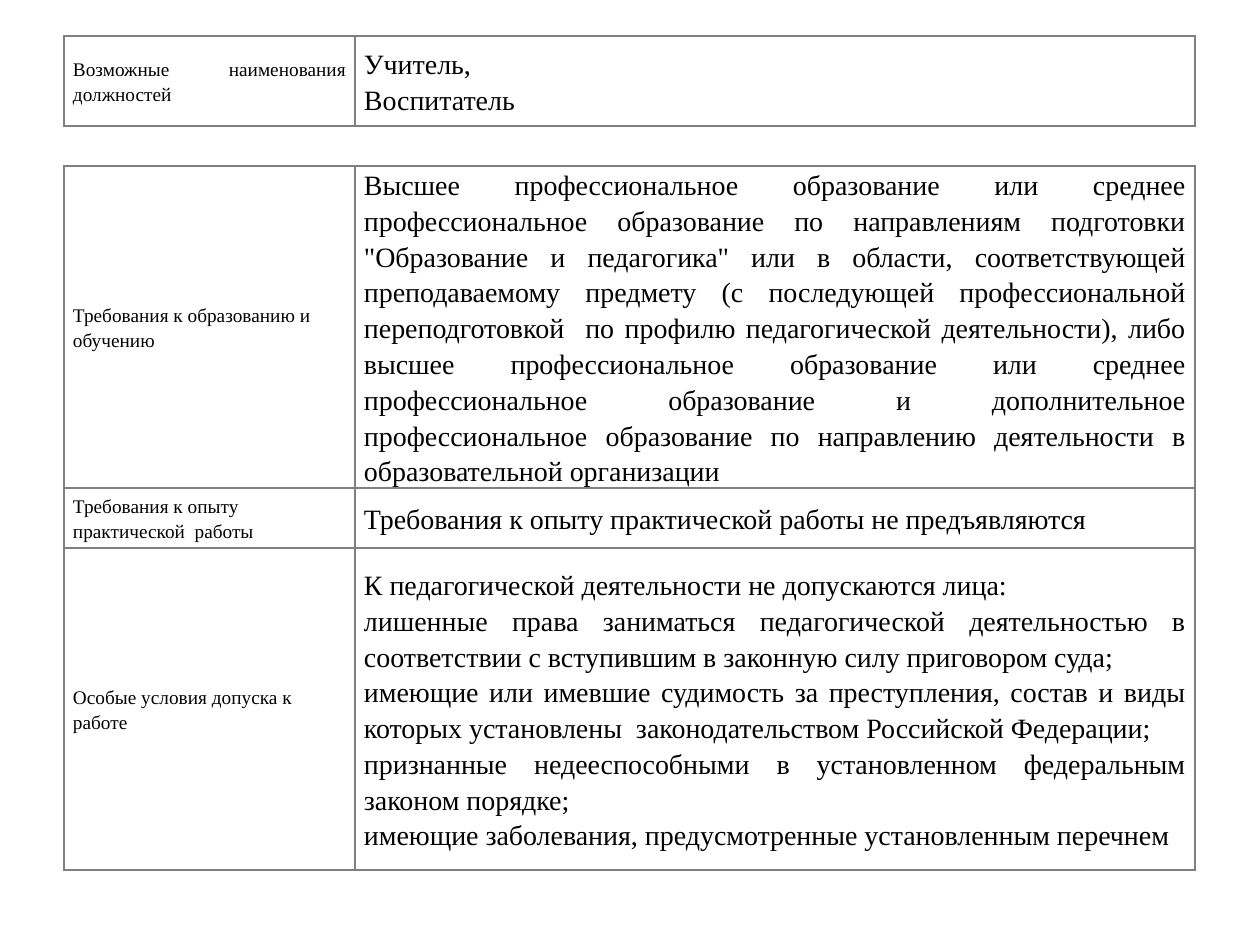
import pptx
import pptx.util
import pptx.dml.color
import pptx.enum.text
import pptx.oxml
import pptx.oxml.ns

PX = 914400 // 126
COLORS = {"text": "000000", "border": "808080"}
FONT = "Times New Roman"
LEFT, TOP = 64, 36
COLUMN_WIDTHS = [291, 840]
ROW_HEIGHTS = [90, 40, 322, 60, 322]
GAP_ROW = 1
ALIGN = pptx.enum.text.PP_ALIGN

ROWS = [
    ("Возможные наименования должностей", ["Учитель,", "Воспитатель"]),
    ("", []),
    ("Требования к образованию и обучению", [
        "Высшее профессиональное образование или среднее профессиональное "
        "образование по направлениям подготовки \"Образование и педагогика\" "
        "или в области, соответствующей преподаваемому предмету "
        "(с последующей профессиональной переподготовкой  по профилю "
        "педагогической деятельности), либо высшее профессиональное "
        "образование или среднее профессиональное образование и "
        "дополнительное профессиональное образование по направлению "
        "деятельности в образовательной организации"]),
    ("Требования к опыту практической  работы", [
        "Требования к опыту практической работы не предъявляются"]),
    ("Особые условия допуска к работе", [
        "К педагогической деятельности не допускаются лица:",
        "лишенные права заниматься педагогической деятельностью в "
        "соответствии с вступившим в законную силу приговором суда;",
        "имеющие или имевшие судимость за преступления, состав и виды "
        "которых установлены  законодательством Российской Федерации;",
        "признанные недееспособными в установленном федеральным законом "
        "порядке;",
        "имеющие заболевания, предусмотренные установленным перечнем"]),
]


def set_borders(cell, visible_sides):
    properties = cell._tc.get_or_add_tcPr()
    namespace = pptx.oxml.ns.nsdecls("a")
    for index, side in enumerate("LRTB"):
        paint = "<a:noFill/>"
        if side in visible_sides:
            paint = f'<a:solidFill><a:srgbClr val="{COLORS["border"]}"/></a:solidFill>'
        line = f'<a:ln{side} {namespace} w="12700">{paint}</a:ln{side}>'
        properties.insert(index, pptx.oxml.parse_xml(line))


def fill_cell(cell, texts, size, alignment):
    cell.text = "\n".join(texts)
    for para in cell.text_frame.paragraphs:
        para.alignment = alignment
        para.line_spacing = 1.15
        para.font.name = FONT
        para.font.size = pptx.util.Pt(size)
        para.font.color.rgb = pptx.dml.color.RGBColor.from_string(COLORS["text"])


deck = pptx.Presentation()
deck.slide_width = pptx.util.Inches(10)
deck.slide_height = pptx.util.Inches(7.5)
page = deck.slides.add_slide(deck.slide_layouts[6])

frame = page.shapes.add_table(
    len(ROW_HEIGHTS), len(COLUMN_WIDTHS), LEFT * PX, TOP * PX,
    sum(COLUMN_WIDTHS) * PX, sum(ROW_HEIGHTS) * PX)
table = frame.table
table.first_row = False
table.horz_banding = False
for column, width in zip(table.columns, COLUMN_WIDTHS):
    column.width = width * PX
for row, height in zip(table.rows, ROW_HEIGHTS):
    row.height = height * PX

for index, (heading, details) in enumerate(ROWS):
    for cell in table.rows[index].cells:
        cell.fill.background()
        cell.vertical_anchor = pptx.enum.text.MSO_ANCHOR.MIDDLE
        cell.margin_left = cell.margin_right = 9 * PX
        cell.margin_top = cell.margin_bottom = 0
        set_borders(cell, "TB" if index == GAP_ROW else "LRTB")
    if index == GAP_ROW:
        table.cell(index, 0).merge(table.cell(index, 1))
        continue
    heading_alignment = ALIGN.JUSTIFY if index == 0 else ALIGN.LEFT
    fill_cell(table.cell(index, 0), [heading], 11, heading_alignment)
    fill_cell(table.cell(index, 1), details, 16, ALIGN.JUSTIFY)

deck.save("out.pptx")
